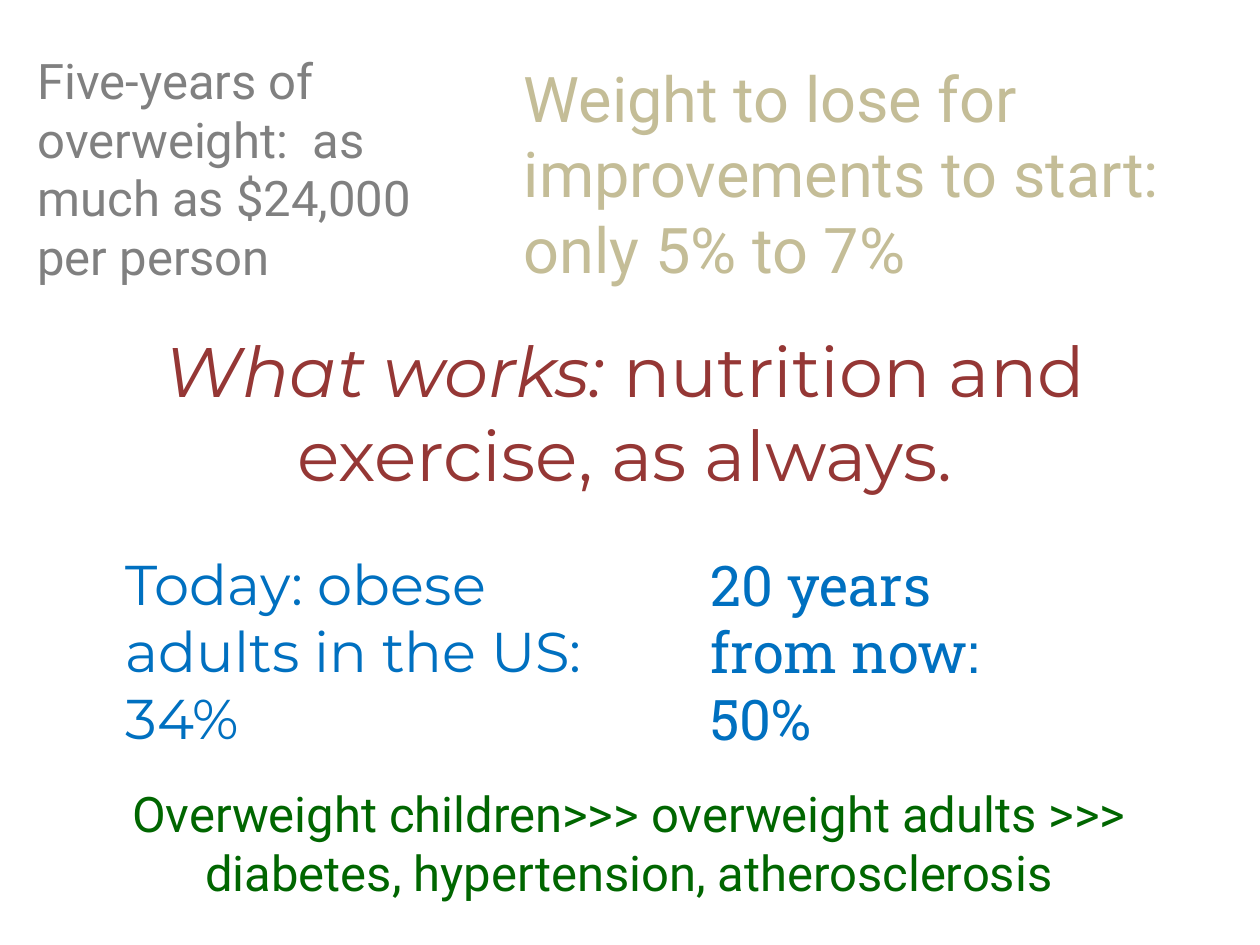
from pptx import Presentation
from pptx.dml.color import RGBColor
from pptx.enum.shapes import MSO_SHAPE
from pptx.enum.text import MSO_ANCHOR, MSO_AUTO_SIZE, PP_ALIGN
from pptx.util import Emu, Pt

PX = 9144
RECTANGLE = MSO_SHAPE.RECTANGLE
TOP = MSO_ANCHOR.TOP
GROW = MSO_AUTO_SIZE.SHAPE_TO_FIT_TEXT
LEFT, CENTER = PP_ALIGN.LEFT, PP_ALIGN.CENTER

WHITE = RGBColor(0xFF, 0xFF, 0xFF)
GRAY = RGBColor(0x80, 0x80, 0x80)
TAN = RGBColor(0xC4, 0xBD, 0x97)
RED = RGBColor(0x95, 0x37, 0x35)
BLUE = RGBColor(0x00, 0x70, 0xC0)
GREEN = RGBColor(0x00, 0x66, 0x00)


def px(*lengths):
    return [Emu(length * PX) for length in lengths]


def write_statement(shape, text, font_name, size, color, align=LEFT):
    frame = shape.text_frame
    frame.text = text
    frame.word_wrap = True
    frame.auto_size = GROW
    frame.vertical_anchor = TOP
    for paragraph in frame.paragraphs:
        paragraph.alignment = align
        for run in paragraph.runs:
            run.font.name = font_name
            run.font.size = Pt(size)
            run.font.color.rgb = color
    return frame


def add_statement(slide, box, *style):
    return write_statement(slide.shapes.add_textbox(*px(*box)), *style)


def add_panel(slide, box, *style):
    panel = slide.shapes.add_shape(RECTANGLE, *px(*box))
    panel.shadow.inherit = False
    panel.fill.solid()
    panel.fill.fore_color.rgb = WHITE
    panel.line.fill.background()
    return write_statement(panel, *style)


def add_what_works(slide, box):
    advice = add_panel(slide, box, "What works: ", "Montserrat", 40, RED, CENTER)
    lead = advice.paragraphs[0].runs[0]
    lead.font.italic = True
    answer = advice.paragraphs[0].add_run()
    answer.text = "nutrition and exercise, as always."
    answer.font.name = lead.font.name
    answer.font.size = lead.font.size
    answer.font.color.rgb = RED


def add_cost_and_goal(slide, left, top):
    add_statement(slide, (left, top, 364, 199),
                  "Five-years of overweight:  as much as $24,000 per person",
                  "Roboto", 28, GRAY)
    add_statement(slide, (left + 386, top + 7, 573, 192),
                  "Weight to lose for improvements to start: only 5% to 7%",
                  "Roboto", 36, TAN)


def add_obesity_trend(slide, left, top):
    add_statement(slide, (left, top, 392, 172),
                  "Today: obese adults in the US: 34%", "Montserrat", 32, BLUE)
    add_panel(slide, (left + 464, top + 1, 275, 172),
              "20 years from now:  50%", "Roboto Slab", 32, BLUE)


def add_consequences(slide, box):
    add_statement(slide, box,
                  "Overweight children>>> overweight adults >>> \n"
                  "diabetes, hypertension, atherosclerosis ",
                  "Roboto", 28, GREEN, CENTER)


def main():
    deck = Presentation()
    deck.slide_width, deck.slide_height = px(1000, 750)
    slide = deck.slides.add_slide(deck.slide_layouts[6])
    add_what_works(slide, (90, 255, 812, 145))
    add_cost_and_goal(slide, 20, 35)
    add_obesity_trend(slide, 90, 431)
    add_consequences(slide, (8, 617, 992, 104))
    deck.save("out.pptx")


if __name__ == "__main__":
    main()
